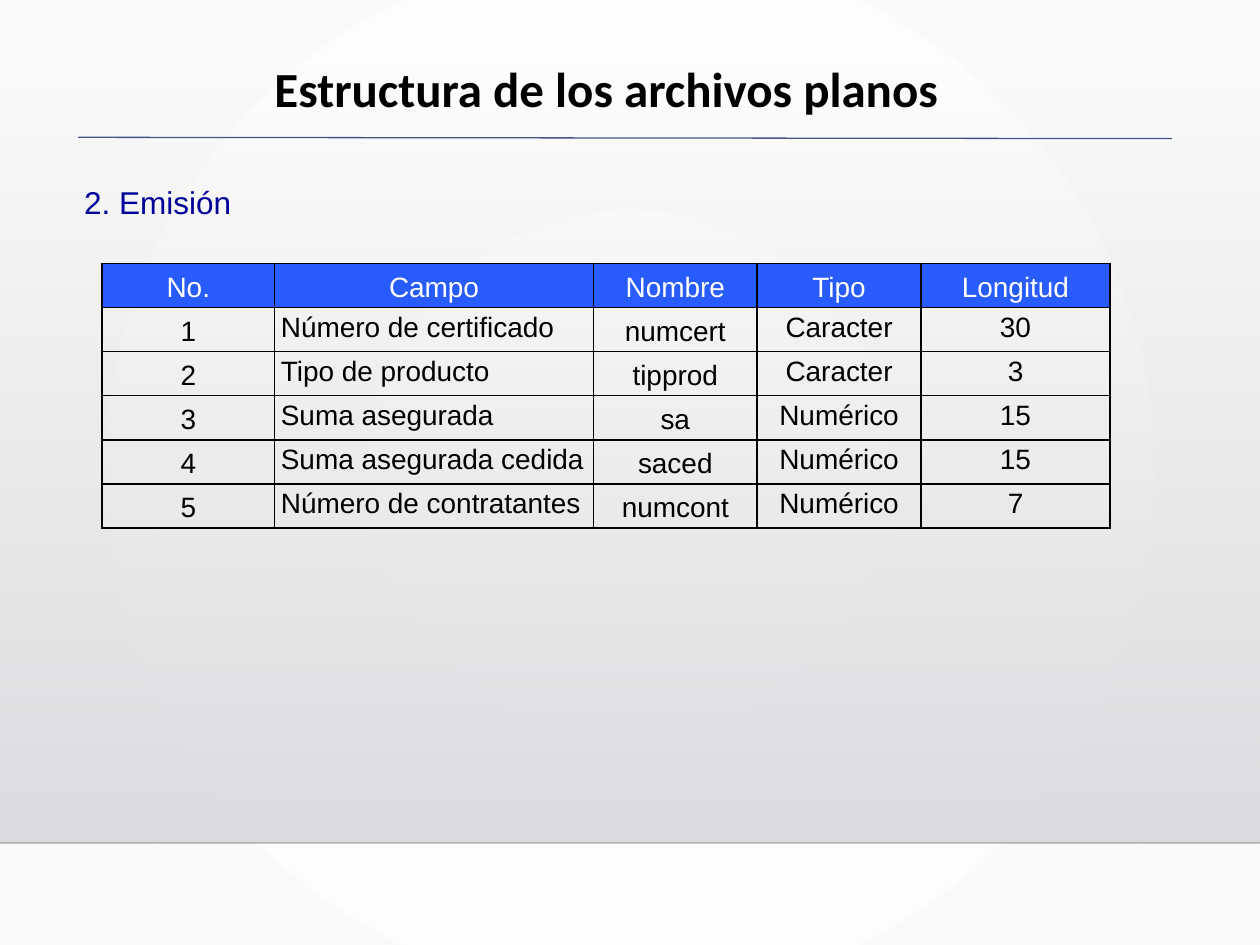
from lxml import etree
from pptx import Presentation
from pptx.dml.color import RGBColor
from pptx.enum.shapes import MSO_CONNECTOR, MSO_SHAPE
from pptx.enum.text import MSO_ANCHOR, PP_ALIGN
from pptx.oxml import parse_xml
from pptx.oxml.ns import nsdecls, qn
from pptx.util import Inches, Pt

# Content
TITLE = "Estructura de los archivos planos"
SUBTITLE = "2. Emisión"
HEADER = ("No.", "Campo", "Nombre", "Tipo", "Longitud")
FIELDS = [
    ("1", "Número de certificado", "numcert", "Caracter", "30"),
    ("2", "Tipo de producto", "tipprod", "Caracter", "3"),
    ("3", "Suma asegurada", "sa", "Numérico", "15"),
    ("4", "Suma asegurada cedida", "saced", "Numérico", "15"),
    ("5", "Número de contratantes", "numcont", "Numérico", "7"),
]
COL_WIDTHS = (1.37, 2.53, 1.3, 1.3, 1.5)
ROW_HEIGHT = 0.35
MIDDLE_COLS = (0, 2)  # columns centred vertically in the body rows
LEFT_COL = 1

BLACK = RGBColor(0x00, 0x00, 0x00)
WHITE = RGBColor(0xFF, 0xFF, 0xFF)
NAVY = RGBColor(0x00, 0x00, 0x99)
BLUE = RGBColor(0x29, 0x5C, 0xFF)
SLATE = RGBColor(0x41, 0x55, 0x88)

RADIAL = ('<a:path path="circle"><a:fillToRect l="50000" t="50000" '
          'r="50000" b="50000"/></a:path>')
DOWNWARD = '<a:lin ang="5400000" scaled="0"/>'


def write(tf, text, size=16, font="Arial", color=BLACK, bold=False,
          align=PP_ALIGN.CENTER, spacing=None, after=None):
    p = tf.paragraphs[0]
    p.alignment = align
    p.line_spacing = spacing
    p.space_after = after
    r = p.add_run()
    r.text = text
    r.font.size, r.font.name, r.font.bold = Pt(size), font, bold
    r.font.color.rgb = color


def set_gradient(fill, parent, stops, direction):
    """Replace a solid fill by a gradient; stops are (position, colour, opacity)."""
    fill.solid()
    gs = "".join(
        f'<a:gs pos="{pos * 1000}"><a:srgbClr val="{color}">'
        f'<a:alpha val="{alpha * 1000}"/></a:srgbClr></a:gs>'
        for pos, color, alpha in stops)
    solid = next(parent.iter(qn("a:solidFill")))
    solid.getparent().replace(solid, parse_xml(
        f'<a:gradFill {nsdecls("a")} rotWithShape="1"><a:gsLst>{gs}</a:gsLst>'
        f'{direction}</a:gradFill>'))


def add_line(s, x1, y1, x2, y2, color, width, opacity=100):
    line = s.shapes.add_connector(MSO_CONNECTOR.STRAIGHT, Inches(x1), Inches(y1),
                                  Inches(x2), Inches(y2))
    line.line.color.rgb = color
    line.line.width = Pt(width)
    spPr = line._element.spPr
    clr = next(spPr.iter(qn("a:srgbClr")))
    etree.SubElement(clr, qn("a:alpha"), val=str(opacity * 1000))
    etree.SubElement(spPr, qn("a:effectLst"))


def add_borders(cell):
    tcPr = cell._tc.get_or_add_tcPr()
    for i, side in enumerate(("lnL", "lnR", "lnT", "lnB")):
        tcPr.insert(i, parse_xml(
            f'<a:{side} {nsdecls("a")} w="12700"><a:solidFill>'
            f'<a:srgbClr val="{BLACK}"/></a:solidFill></a:{side}>'))


def main():
    prs = Presentation()
    prs.slide_width, prs.slide_height = Inches(10), Inches(7.5)
    s = prs.slides.add_slide(prs.slide_layouts[5])

    # Background and shaded band, placed behind the title
    set_gradient(s.background.fill, s._element,
                 [(0, "FFFFFF", 100), (100, "FAFAFA", 100)], RADIAL)
    band = s.shapes.add_shape(MSO_SHAPE.RECTANGLE, 0, Inches(0.51),
                              Inches(10), Inches(6.18))
    band.shadow.inherit = False
    band.line.fill.background()
    set_gradient(band.fill, band._element.spPr,
                 [(0, "DCDCE0", 0), (100, "DEDEE2", 100)], DOWNWARD)
    s.shapes._spTree.insert(2, band._element)
    add_line(s, 0, 6.69, 10, 6.69, BLACK, 1, opacity=20)

    # Title and rule
    title = s.shapes.title
    title.left, title.top = Inches(1.14), Inches(0.41)
    title.width, title.height = Inches(7.34), Inches(0.57)
    title.text_frame.vertical_anchor = MSO_ANCHOR.MIDDLE
    write(title.text_frame, TITLE, size=28, font="Calibri", bold=True)
    add_line(s, 0.62, 1.09, 9.3, 1.1, SLATE, 0.75)

    # Subtitle
    box = s.shapes.add_textbox(Inches(0.57), Inches(1.4), Inches(8.56), Inches(0.4))
    box.text_frame.word_wrap = True
    write(box.text_frame, SUBTITLE, size=18, color=NAVY, align=PP_ALIGN.JUSTIFY)

    # Table of fields
    rows = [HEADER] + FIELDS
    table = s.shapes.add_table(
        len(rows), len(HEADER), Inches(0.81), Inches(2.09),
        Inches(sum(COL_WIDTHS)), Inches(ROW_HEIGHT * len(rows))).table
    table.first_row = table.horz_banding = False
    for col, width in zip(table.columns, COL_WIDTHS):
        col.width = Inches(width)
    for i, values in enumerate(rows):
        table.rows[i].height = Inches(ROW_HEIGHT)
        for j, text in enumerate(values):
            cell = table.cell(i, j)
            head = i == 0
            middle = head or j in MIDDLE_COLS
            cell.margin_left = cell.margin_right = Inches(0.05)
            cell.margin_top = cell.margin_bottom = 0
            cell.vertical_anchor = MSO_ANCHOR.MIDDLE if middle else MSO_ANCHOR.TOP
            if head:
                cell.fill.solid()
                cell.fill.fore_color.rgb = BLUE
            else:
                cell.fill.background()
            add_borders(cell)
            write(cell.text_frame, text, color=WHITE if head else BLACK,
                  align=PP_ALIGN.LEFT if j == LEFT_COL and not head else PP_ALIGN.CENTER,
                  spacing=1.15, after=None if middle else Pt(10))

    prs.save("out.pptx")


if __name__ == "__main__":
    main()
